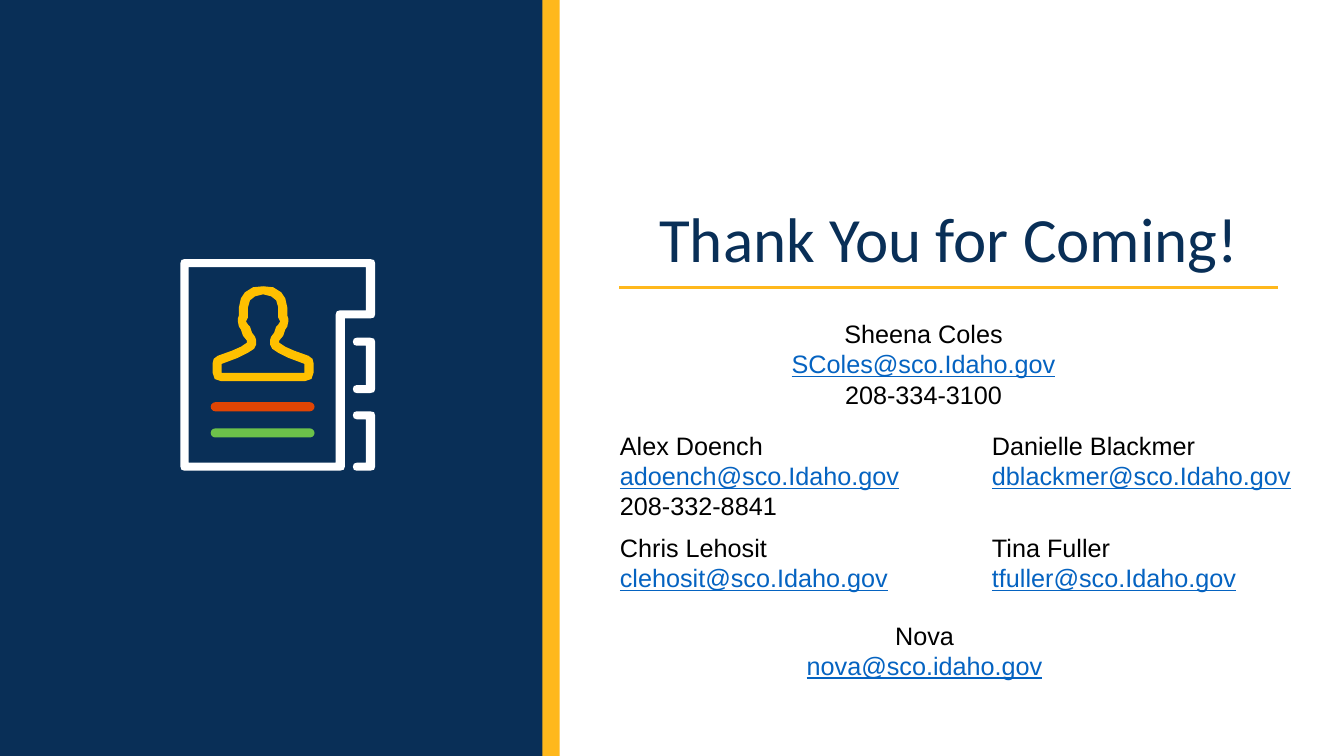
import pptx
import pptx.util
import pptx.dml.color
import pptx.enum.shapes
import pptx.enum.text
import pptx.oxml

theme = {
    "navy": "092F57", "gold": "FFB81C", "amber": "FFC000", "white": "FFFFFF",
    "red": "E14504", "green": "6CC24A", "black": "000000", "link": "0563C1",
    "head": ("Calibri", 45), "body": ("Arial", 18),
}
Inches, Pt = pptx.util.Inches, pptx.util.Pt
Rgb = pptx.dml.color.RGBColor.from_string
Kind = pptx.enum.shapes.MSO_SHAPE
Align = pptx.enum.text.PP_ALIGN

deck = pptx.Presentation()
deck.slide_width, deck.slide_height = Inches(13.33), Inches(7.5)
slide = deck.slides.add_slide(deck.slide_layouts[5])
shapes = slide.shapes


def paint(shape, tone):
    shape.shadow.inherit = False
    shape.fill.solid()
    shape.fill.fore_color.rgb = Rgb(theme[tone])
    shape.line.fill.background()


def trace(rings, tone):
    """Fill closed rings of points given in hundredths of an inch."""
    pen = shapes.build_freeform(*rings[0][0], scale=Inches(0.01))
    pen.add_line_segments(rings[0][1:], close=True)
    for ring in rings[1:]:
        pen.move_to(*ring[0])
        pen.add_line_segments(ring[1:], close=True)
    paint(pen.convert_to_shape(), tone)


# Side panel with its gold edge
side = Inches(5.38)
for left, tone in ((Inches(0.17), "gold"), (0, "navy")):
    paint(shapes.add_shape(Kind.RECTANGLE, left, 0, side, deck.slide_height), tone)

# Title and rule
title = shapes.title
title.left, title.top = Inches(5.86), Inches(1.98)
title.width, title.height = Inches(7.1), Inches(0.84)
title.text_frame.text = "Thank You for Coming!"
title.text_frame.vertical_anchor = pptx.enum.text.MSO_ANCHOR.MIDDLE
line = title.text_frame.paragraphs[0]
line.alignment = Align.CENTER
line.line_spacing = 0.9
font = line.runs[0].font
font.name, font.size = theme["head"][0], Pt(theme["head"][1])
font.color.rgb = Rgb(theme["navy"])

rule = shapes.add_connector(pptx.enum.shapes.MSO_CONNECTOR.STRAIGHT,
                            Inches(6.14), Inches(2.85), Inches(12.68), Inches(2.85))
rule.line.color.rgb = Rgb(theme["gold"])
rule.line.width = Pt(2.25)
props = rule._element.spPr
props.append(props.makeelement(pptx.oxml.ns.qn("a:effectLst"), {}))

# Address book: cover, text bars, index tabs
cover = [(367, 257), (183, 257), (180, 258), (179, 261), (179, 463), (180, 466),
         (183, 467), (337, 467), (341, 466), (342, 463), (342, 316), (367, 316),
         (371, 315), (372, 312), (372, 261), (371, 258)]
page = [(363, 308), (337, 308), (334, 309), (333, 312), (333, 459),
        (187, 459), (187, 265), (363, 265)]
trace([cover, page], "white")

for top, tone in ((4.25, "green"), (3.99, "red")):
    bar = shapes.add_shape(Kind.ROUNDED_RECTANGLE, Inches(2.09), Inches(top),
                           Inches(1.03), Inches(0.09))
    bar.adjustments[0] = 0.5
    paint(bar, tone)

for top, base in ((335, 390), (408, 467)):
    trace([[(367, top), (354, top), (351, top + 1), (350, top + 4), (351, top + 7),
            (354, top + 8), (363, top + 8), (363, base - 8), (354, base - 8),
            (351, base - 7), (350, base - 4), (351, base - 1), (354, base),
            (367, base), (371, base - 1), (372, base - 4),
            (372, top + 4), (371, top + 1)]], "white")

# Person: left halves, mirrored about the middle
outer = [(261, 284), (251, 285), (243, 290), (239, 296), (237, 305), (237, 313),
         (236, 316), (236, 319), (237, 324), (239, 327), (241, 333), (245, 338),
         (245, 340), (239, 344), (230, 348), (216, 353), (212, 356), (211, 360),
         (211, 370), (213, 376), (219, 378)]
inner = [(261, 292), (253, 294), (248, 298), (246, 305), (246, 315), (245, 317),
         (244, 319), (246, 322), (248, 324), (250, 330), (253, 334), (254, 337),
         (254, 342), (252, 346), (246, 350), (236, 355), (220, 361), (220, 370)]
trace([half + [(522 - x, y) for x, y in reversed(half)] for half in (outer, inner)],
      "amber")

# Contacts: two columns of two rows, one centred above and one below
cols, rows = (6.05, 9.74), (4.22, 5.23)
cards = [
    (7.44, 3.11, 3.44, Align.CENTER,
     ["Sheena Coles", "SColes@sco.Idaho.gov", "208-334-3100"]),
    (7.49, 6.1, 3.36, Align.CENTER, ["Nova", "nova@sco.idaho.gov"]),
    (cols[1], rows[0], 3.36, Align.LEFT,
     ["Danielle Blackmer", "dblackmer@sco.Idaho.gov"]),
    (cols[0], rows[1], 3.12, Align.LEFT, ["Chris Lehosit", "clehosit@sco.Idaho.gov"]),
    (cols[1], rows[1], 3.12, Align.LEFT, ["Tina Fuller", "tfuller@sco.Idaho.gov"]),
    (cols[0], rows[0], 3.09, Align.LEFT,
     ["Alex Doench", "adoench@sco.Idaho.gov", "208-332-8841"]),
]
for left, top, width, align, lines in cards:
    height = 0.1 + 0.3 * len(lines)
    frame = shapes.add_textbox(Inches(left), Inches(top),
                               Inches(width), Inches(height)).text_frame
    frame.word_wrap = True
    frame.text = "\n".join(lines)
    for line in frame.paragraphs:
        line.alignment = align
        mail = "@" in line.text
        font = line.runs[0].font
        font.name, font.size = theme["body"][0], Pt(theme["body"][1])
        font.color.rgb = Rgb(theme["link" if mail else "black"])
        font.underline = mail

deck.save("out.pptx")
